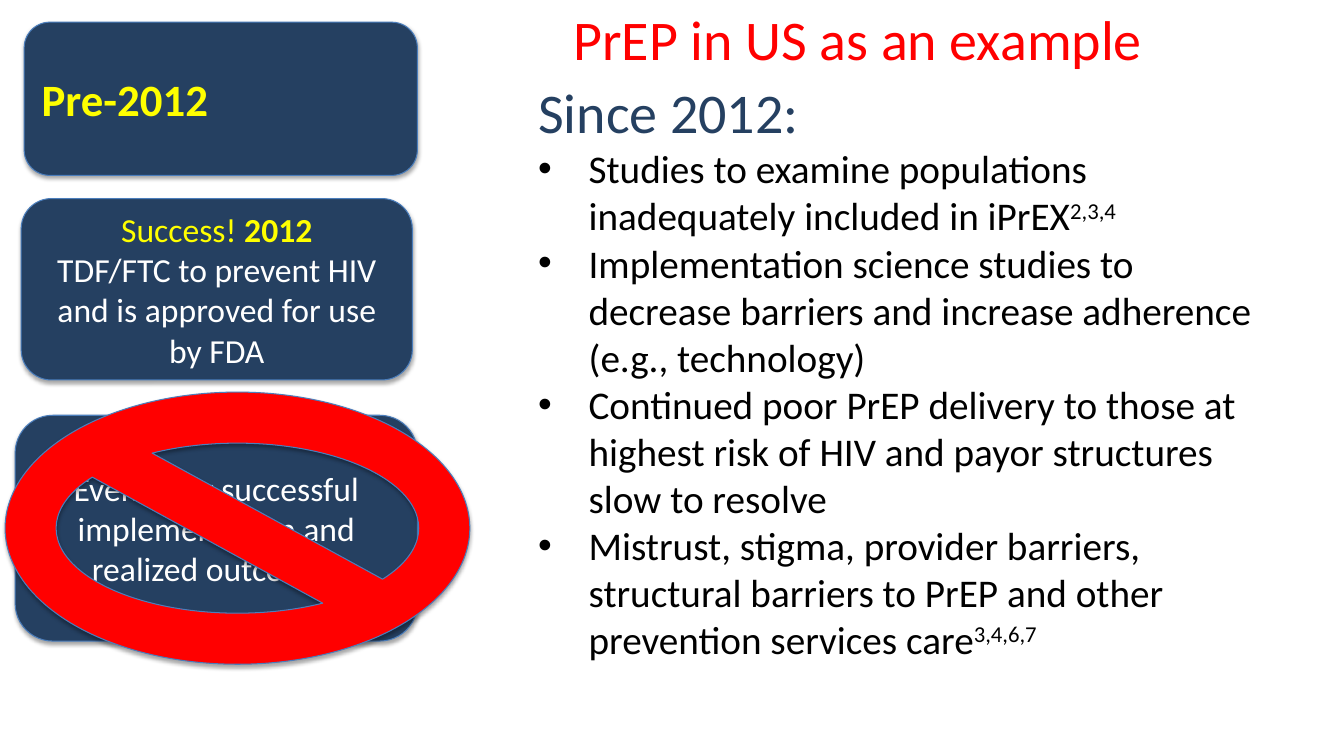
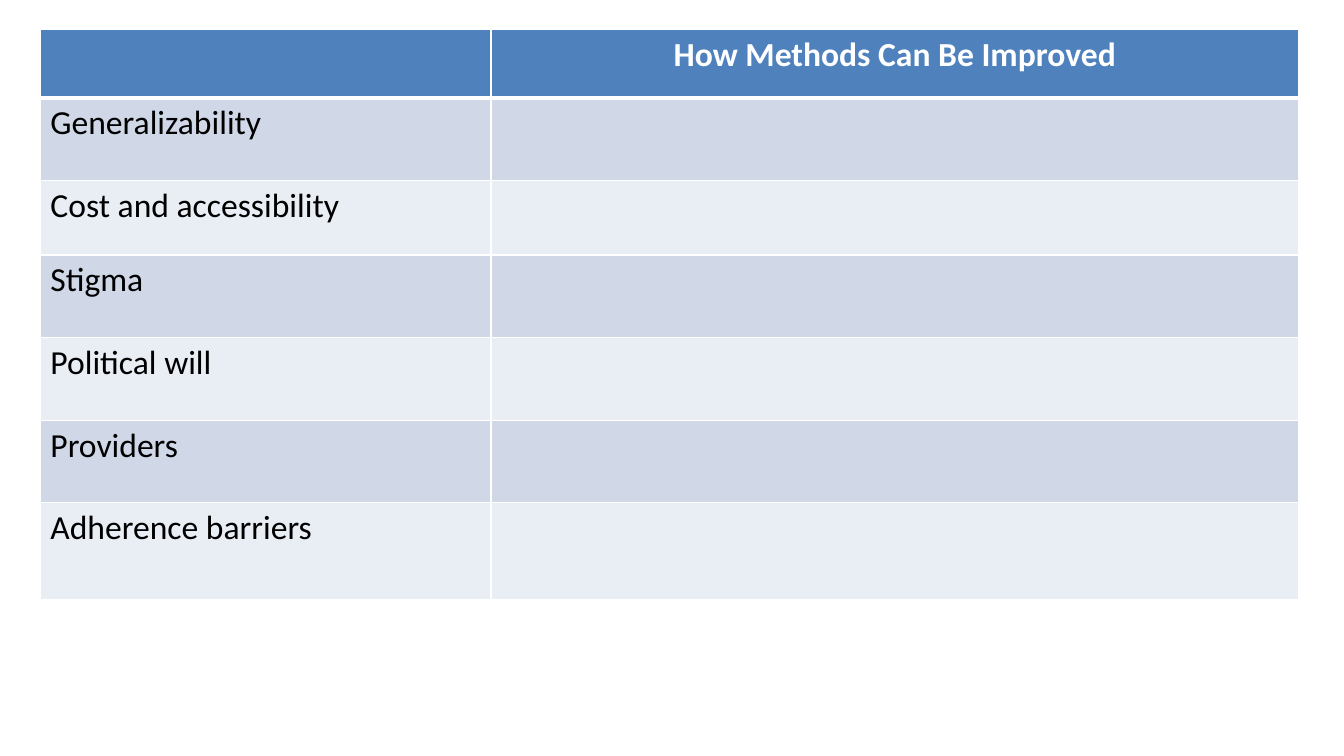
"""Build two slides on PrEP in the US and on improving methods."""
from dataclasses import dataclass

from lxml.etree import SubElement
from pptx import Presentation
from pptx.dml.color import RGBColor
from pptx.enum.shapes import MSO_SHAPE
from pptx.enum.text import MSO_ANCHOR, MSO_AUTO_SIZE, PP_ALIGN
from pptx.oxml.ns import qn
from pptx.util import Inches, Pt

FONT = "Calibri"
COLORS = {
    "navy": "254061", "outline": "4B7EBC", "yellow": "FFFF00", "red": "FF0000",
    "white": "FFFFFF", "black": "000000", "header": "4F81BD",
    "band_dark": "D0D8E8", "band_light": "E9EDF4",
}


@dataclass(frozen=True)
class Span:
    text: str
    color: str = "white"
    size: int = 24
    bold: bool = False
    superscript: bool = False


@dataclass(frozen=True)
class Para:
    spans: tuple[Span, ...]
    align: PP_ALIGN = PP_ALIGN.LEFT
    bullet: bool = False


@dataclass(frozen=True)
class Panel:
    left: float
    top: float
    width: float
    height: float
    paras: tuple[Para, ...] = ()
    fill: str = "navy"
    shape: MSO_SHAPE = MSO_SHAPE.ROUNDED_RECTANGLE


def centered(*spans: Span) -> Para:
    return Para(spans, PP_ALIGN.CENTER)


def bullet(text: str, references: str = "") -> Para:
    spans = (Span(text, "black", 28),)
    if references:
        spans += (Span(references, "black", 28, superscript=True),)
    return Para(spans, bullet=True)


PANELS = (
    Panel(0.24, 0.22, 3.9, 1.52, (Para((Span("Pre-2012", "yellow", 32, True),)),)),
    Panel(0.21, 1.97, 3.88, 1.8, (
        centered(Span("Success! ", "yellow"), Span("2012", "yellow", bold=True)),
        centered(Span("TDF/FTC to prevent HIV and is approved for use by FDA")),
    )),
    Panel(0.15, 4.12, 3.99, 2.24, (
        centered(Span("Eventually successful implementation and")),
        centered(Span("realized outcomes")),
    )),
    Panel(0.05, 3.89, 4.61, 2.7, fill="red", shape=MSO_SHAPE.NO_SYMBOL),
)
TITLE = (Para((Span("PrEP in US as an example", "red", 40),)),)
FINDINGS = (
    Para((Span("Since 2012:", "navy", 40),)),
    bullet("Studies to examine populations inadequately included in iPrEX", "2,3,4"),
    bullet("Implementation science studies to decrease barriers and increase "
           "adherence (e.g., technology)"),
    bullet("Continued poor PrEP delivery to those at highest risk of HIV and "
           "payor structures slow to resolve"),
    bullet("Mistrust, stigma, provider barriers, structural barriers to PrEP and "
           "other prevention services care", "3,4,6,7"),
)
HEADING = "How Methods Can Be Improved"
TOPICS = ("Generalizability", "Cost and accessibility", "Stigma",
          "Political will", "Providers", "Adherence barriers")
COLUMN_WIDTHS = (4.47, 8.01)
ROW_HEIGHTS = (0.68, 0.82, 0.74, 0.82, 0.82, 0.82, 0.96)


def rgb(name: str) -> RGBColor:
    return RGBColor.from_string(COLORS[name])


def add_span(para, text: str, *, color: str, size: int = 24, bold: bool = False,
             superscript: bool = False) -> None:
    run = para.add_run()
    run.text = text
    run.font.name = FONT
    run.font.size = Pt(size)
    run.font.bold = bold
    run.font.color.rgb = rgb(color)
    if superscript:
        run._r.get_or_add_rPr().set("baseline", "30000")


def add_bullet(para) -> None:
    properties = para._p.get_or_add_pPr()
    properties.set("marL", str(Inches(0.5)))
    properties.set("indent", str(-Inches(0.5)))
    SubElement(properties, qn("a:buFont"), typeface="Arial")
    SubElement(properties, qn("a:buChar"), char="•")


def fill_frame(frame, paras: tuple[Para, ...]) -> None:
    frame.word_wrap = True
    for index, item in enumerate(paras):
        para = frame.add_paragraph() if index else frame.paragraphs[0]
        para.alignment = item.align
        if item.bullet:
            add_bullet(para)
        for span in item.spans:
            add_span(para, span.text, color=span.color, size=span.size,
                     bold=span.bold, superscript=span.superscript)


def add_shadow(shape) -> None:
    shape.shadow.inherit = False
    effects = shape._element.spPr.find(qn("a:effectLst"))
    shadow = SubElement(effects, qn("a:outerShdw"), blurRad=str(Pt(3.1)),
                        dist=str(Pt(1.8)), dir="5400000", rotWithShape="0")
    color = SubElement(shadow, qn("a:srgbClr"), val=COLORS["black"])
    SubElement(color, qn("a:alpha"), val="35000")


def add_panel(page, panel: Panel) -> None:
    shape = page.shapes.add_shape(panel.shape, Inches(panel.left), Inches(panel.top),
                                  Inches(panel.width), Inches(panel.height))
    shape.fill.solid()
    shape.fill.fore_color.rgb = rgb(panel.fill)
    shape.line.color.rgb = rgb("outline")
    shape.line.width = Pt(0.75)
    add_shadow(shape)
    shape.text_frame.vertical_anchor = MSO_ANCHOR.MIDDLE
    fill_frame(shape.text_frame, panel.paras)


def add_text(page, left: float, top: float, width: float, height: float,
             paras: tuple[Para, ...]) -> None:
    box = page.shapes.add_textbox(Inches(left), Inches(top), Inches(width), Inches(height))
    fill_frame(box.text_frame, paras)
    box.text_frame.auto_size = MSO_AUTO_SIZE.SHAPE_TO_FIT_TEXT


def style_cell(cell, fill: str, *, top: float = 1, bottom: float = 1) -> None:
    properties = cell._tc.get_or_add_tcPr()
    for side, width in (("L", 1), ("R", 1), ("T", top), ("B", bottom)):
        line = SubElement(properties, qn(f"a:ln{side}"), w=str(Pt(width)))
        solid = SubElement(line, qn("a:solidFill"))
        SubElement(solid, qn("a:srgbClr"), val=COLORS["white"])
    cell.fill.solid()
    cell.fill.fore_color.rgb = rgb(fill)


def add_methods_table(page) -> None:
    table = page.shapes.add_table(
        len(ROW_HEIGHTS), len(COLUMN_WIDTHS), Inches(0.4), Inches(0.29),
        Inches(sum(COLUMN_WIDTHS)), Inches(sum(ROW_HEIGHTS))).table
    for column, width in zip(table.columns, COLUMN_WIDTHS):
        column.width = Inches(width)
    for index, (row, height) in enumerate(zip(table.rows, ROW_HEIGHTS)):
        row.height = Inches(height)
        fill = "band_dark" if index % 2 else "band_light"
        for cell in row.cells:
            style_cell(cell, fill if index else "header",
                       top=3 if index == 1 else 1, bottom=1 if index else 3)
    heading = table.cell(0, 1).text_frame.paragraphs[0]
    heading.alignment = PP_ALIGN.CENTER
    add_span(heading, HEADING, color="white", bold=True)
    for index, topic in enumerate(TOPICS, start=1):
        add_span(table.cell(index, 0).text_frame.paragraphs[0], topic, color="black")


def main() -> None:
    deck = Presentation()
    deck.slide_width, deck.slide_height = Inches(13.33), Inches(7.5)
    blank = deck.slide_layouts[6]

    example_page = deck.slides.add_slide(blank)
    for panel in PANELS:
        add_panel(example_page, panel)
    add_text(example_page, 5.24, 0.72, 7.3, 5.96, FINDINGS)
    add_text(example_page, 5.59, 0, 6.36, 0.77, TITLE)

    add_methods_table(deck.slides.add_slide(blank))
    deck.save("out.pptx")


if __name__ == "__main__":
    main()
